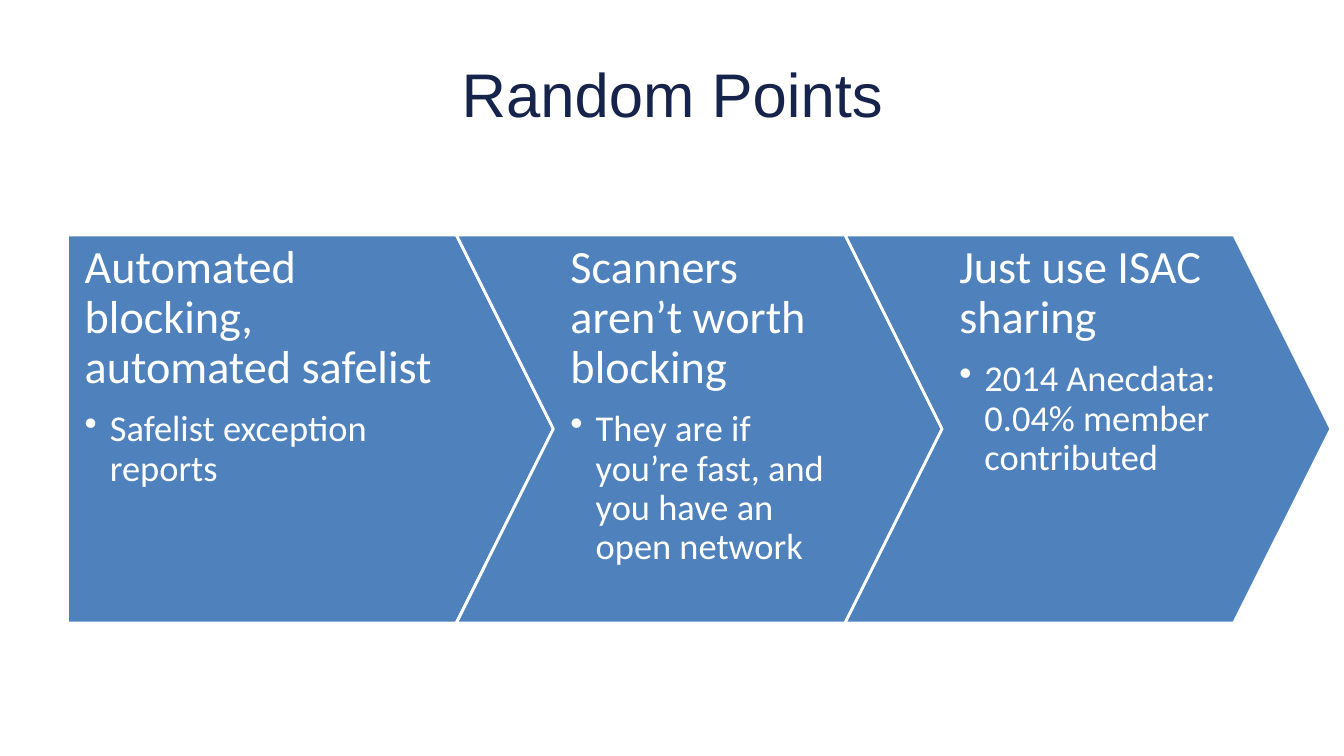
from lxml.etree import SubElement
from pptx import Presentation
from pptx.dml.color import RGBColor
from pptx.enum.shapes import MSO_SHAPE
from pptx.enum.text import MSO_ANCHOR, PP_ALIGN
from pptx.oxml.ns import qn
from pptx.util import Inches, Pt

NAVY = RGBColor(0x16, 0x23, 0x4A)
BLUE = RGBColor(0x4F, 0x81, 0xBD)
WHITE = RGBColor(0xFF, 0xFF, 0xFF)

NOTCH_RATIO = 0.25
POINTS = [
    ("Automated blocking, automated safelist", "Safelist exception reports"),
    ("Scanners aren’t worth blocking",
     "They are if you’re fast, and you have an open network"),
    ("Just use ISAC sharing", "2014 Anecdata: 0.04% member contributed"),
]


def set_font(paragraph, name, size, color):
    paragraph.font.name = name
    paragraph.font.size = Pt(size)
    paragraph.font.color.rgb = color


def add_bullet(paragraph):
    properties = paragraph._p.get_or_add_pPr()
    properties.set("marL", str(Inches(0.25)))
    properties.set("indent", str(Inches(-0.25)))
    SubElement(properties, qn("a:buChar"), char="•")


def place_title(slide, left, top, width, height):
    title = slide.shapes.title
    title.left, title.top = Inches(left), Inches(top)
    title.width, title.height = Inches(width), Inches(height)
    frame = title.text_frame
    frame.text = "Random Points"
    frame.vertical_anchor = MSO_ANCHOR.MIDDLE
    paragraph = frame.paragraphs[0]
    paragraph.alignment = PP_ALIGN.CENTER
    set_font(paragraph, "Arial", 44, NAVY)


def add_arrow(slide, preset, left, top, width, height):
    arrow = slide.shapes.add_shape(
        preset, Inches(left), Inches(top), Inches(width), Inches(height))
    arrow.adjustments[0] = NOTCH_RATIO
    arrow.shadow.inherit = False
    arrow.fill.solid()
    arrow.fill.fore_color.rgb = BLUE
    arrow.line.color.rgb = WHITE
    arrow.line.width = Pt(2)


def add_point_text(slide, heading, detail, left, top, width, height, right_inset):
    box = slide.shapes.add_textbox(
        Inches(left), Inches(top), Inches(width), Inches(height))
    frame = box.text_frame
    frame.word_wrap = True
    frame.margin_left, frame.margin_right = Inches(0.17), Inches(right_inset)
    frame.margin_top = frame.margin_bottom = Inches(0.09)

    heading_paragraph = frame.paragraphs[0]
    detail_paragraph = frame.add_paragraph()
    detail_paragraph.level = 1
    add_bullet(detail_paragraph)
    for paragraph, text, size, space_after in (
        (heading_paragraph, heading, 33, 12),
        (detail_paragraph, detail, 26, 4),
    ):
        paragraph.text = text
        paragraph.line_spacing = 0.9
        paragraph.space_after = Pt(space_after)
        set_font(paragraph, "Calibri", size, WHITE)


def add_process(slide, left, top, width, height):
    """Interlocking arrows: each one's point fills the notch of the next."""
    notch = NOTCH_RATIO * height
    step = (width - notch) / len(POINTS)
    for index, (heading, detail) in enumerate(POINTS):
        first = index == 0
        arrow_left = left + index * step
        preset = MSO_SHAPE.PENTAGON if first else MSO_SHAPE.CHEVRON
        add_arrow(slide, preset, arrow_left, top, step + notch, height)
        if first:
            text_left, text_width, right_inset = arrow_left, step + notch / 2, 0.68
        else:
            text_left, text_width, right_inset = arrow_left + notch, step - notch, 0.17
        add_point_text(slide, heading, detail, text_left, top,
                       text_width, height, right_inset)


def main():
    presentation = Presentation()
    presentation.slide_width = Inches(13.33)
    presentation.slide_height = Inches(7.5)
    slide = presentation.slides.add_slide(presentation.slide_layouts[5])
    place_title(slide, 0.67, 0.3, 12, 1.25)
    add_process(slide, 0.67, 2.33, 12.53, 3.85)
    presentation.save("out.pptx")


if __name__ == "__main__":
    main()
